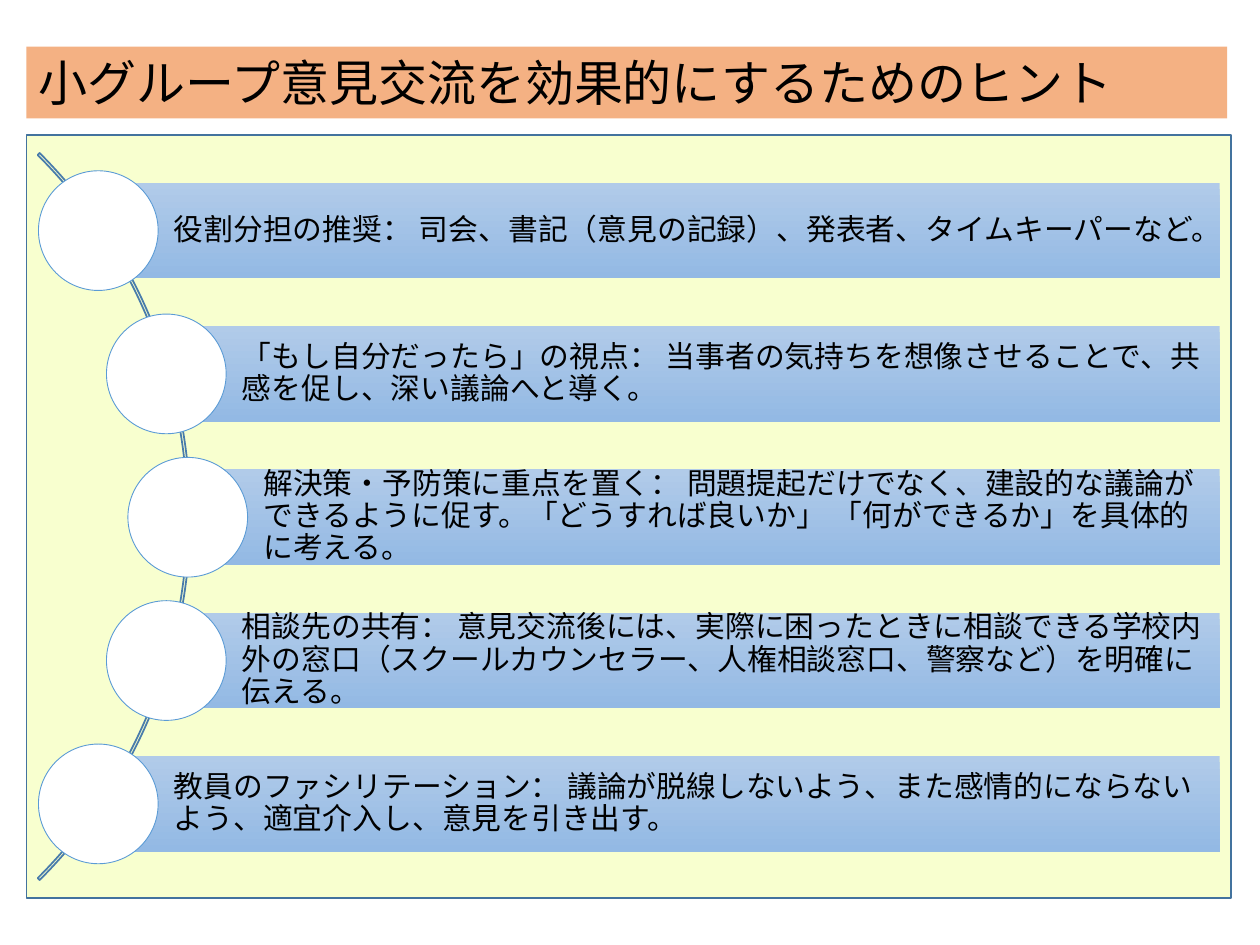
from pptx import Presentation
from pptx.dml.color import RGBColor
from pptx.enum.shapes import MSO_SHAPE as Kind
from pptx.enum.text import MSO_ANCHOR as Anchor, MSO_AUTO_SIZE as Auto, PP_ALIGN as Align
from pptx.oxml.ns import qn
from pptx.util import Inches, Pt

FONT = "Noto Sans CJK JP"


def color(code):
    return RGBColor.from_string(code)


def write(shape, text, size):
    frame = shape.text_frame
    frame.word_wrap = True
    para = frame.paragraphs[0]
    para.alignment = Align.LEFT
    run = para.add_run()
    run.text = text
    font = run.font
    font.size = Pt(size)
    font.name = FONT
    font.color.rgb = color("000000")
    # East Asian typeface for the Japanese glyphs
    east = font._element.makeelement(qn("a:ea"), {"typeface": FONT})
    font._element.append(east)
    return frame


deck = Presentation()
deck.slide_width, deck.slide_height = Inches(10), Inches(7.5)
slide = deck.slides.add_slide(deck.slide_layouts[6])
shapes = slide.shapes

# Panel behind the list
panel = shapes.add_shape(Kind.RECTANGLE, Inches(0.21), Inches(1.07), Inches(9.56), Inches(6.06))
panel.shadow.inherit = False
panel.fill.solid()
panel.fill.fore_color.rgb = color("F8FFCF")
panel.line.color.rgb = color("43739E")
panel.line.width = Pt(1)

# Title band
title = shapes.add_shape(Kind.RECTANGLE, Inches(0.21), Inches(0.37), Inches(9.53), Inches(0.57))
title.shadow.inherit = False
title.fill.solid()
title.fill.fore_color.rgb = color("F4B183")
title.line.fill.background()
frame = write(title, "小グループ意見交流を効果的にするためのヒント", 28)
frame.vertical_anchor = Anchor.TOP
frame.auto_size = Auto.SHAPE_TO_FIT_TEXT

# Arc that links the circles
arc = shapes.add_shape(Kind.BLOCK_ARC, Inches(-6.65), Inches(0.02), Inches(8.16), Inches(8.16))
arc.shadow.inherit = False
for i, value in enumerate((189, 27, 0.0027)):
    arc.adjustments[i] = value
arc.fill.background()
arc.line.color.rgb = color("497CAB")
arc.line.width = Pt(1)

# Hints: centre of each circle across the slide, and its text
hints = [
    (0.78, "役割分担の推奨： 司会、書記（意見の記録）、発表者、タイムキーパーなど。"),
    (1.32, "「もし自分だったら」の視点： 当事者の気持ちを想像させることで、"
           "共感を促し、深い議論へと導く。"),
    (1.49, "解決策・予防策に重点を置く： 問題提起だけでなく、建設的な議論が"
           "できるように促す。「どうすれば良いか」 「何ができるか」を具体的に考える。"),
    (1.32, "相談先の共有： 意見交流後には、実際に困ったときに相談できる学校内外の窓口"
           "（スクールカウンセラー、人権相談窓口、警察など）を明確に伝える。"),
    (0.78, "教員のファシリテーション： 議論が脱線しないよう、"
           "また感情的にならないよう、適宜介入し、意見を引き出す。"),
]
right, first, pitch = 9.68, 1.83, 1.1375
high, size = 0.76, 0.95

for row, (x, text) in enumerate(hints):
    y = first + row * pitch

    # Bar with its text
    bar = shapes.add_shape(Kind.RECTANGLE, Inches(x), Inches(y - high / 2),
                           Inches(right - x), Inches(high))
    bar.shadow.inherit = False
    bar.line.fill.background()
    bar.fill.gradient()
    bar.fill.gradient_angle = 270
    for stop, code in zip(bar.fill.gradient_stops, ("B1CBE9", "93B9E4")):
        stop.color.rgb = color(code)
    frame = write(bar, text, 17)
    frame.vertical_anchor = Anchor.MIDDLE
    frame.margin_left = Inches(0.6)
    frame.margin_top = frame.margin_right = frame.margin_bottom = Inches(0.05)
    frame.paragraphs[0].line_spacing = 0.9

    # Circle on the arc
    dot = shapes.add_shape(Kind.OVAL, Inches(x - size / 2), Inches(y - size / 2),
                           Inches(size), Inches(size))
    dot.shadow.inherit = False
    dot.fill.solid()
    dot.fill.fore_color.rgb = color("FFFFFF")
    dot.line.color.rgb = color("5B9BD5")
    dot.line.width = Pt(0.5)

deck.save("out.pptx")
